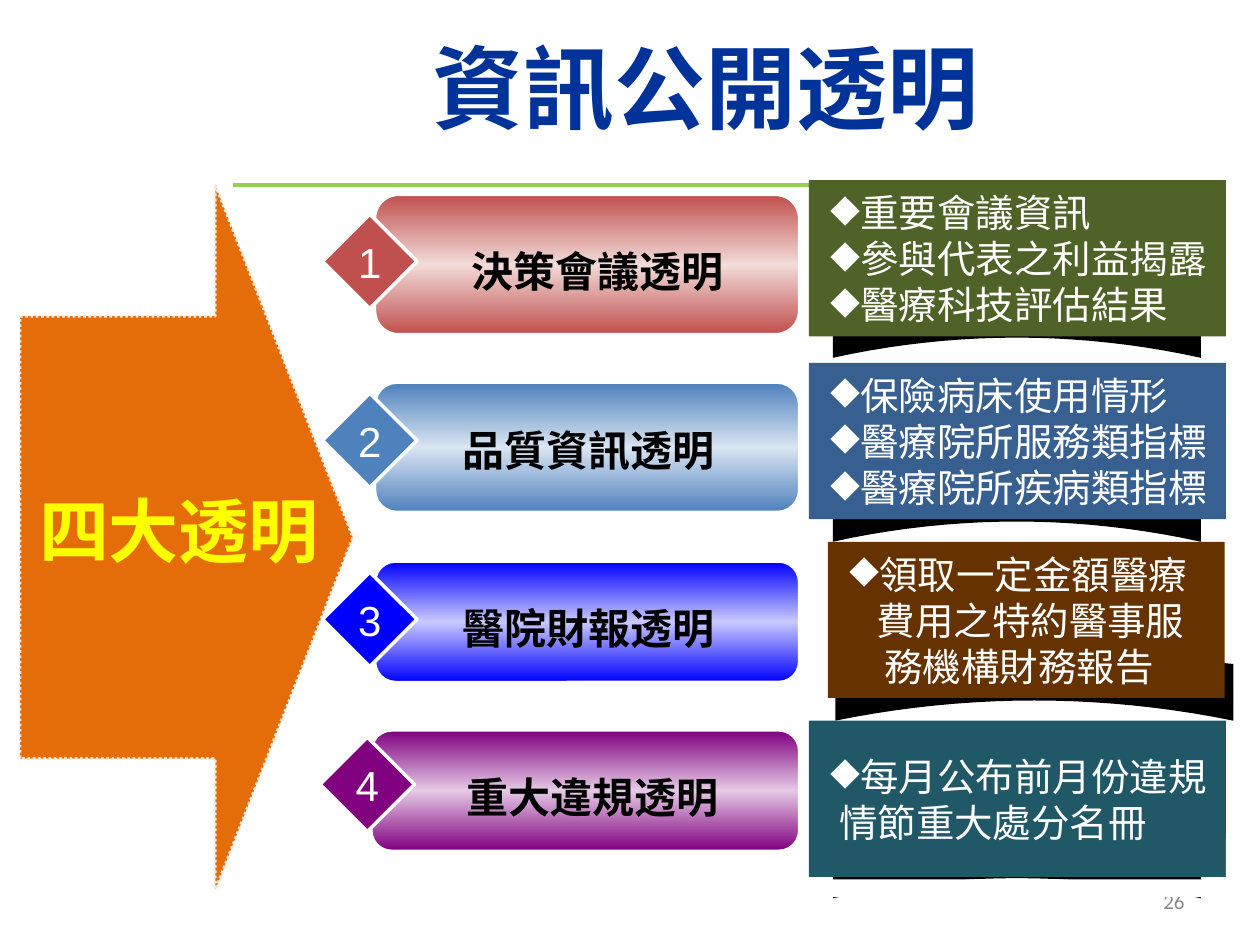
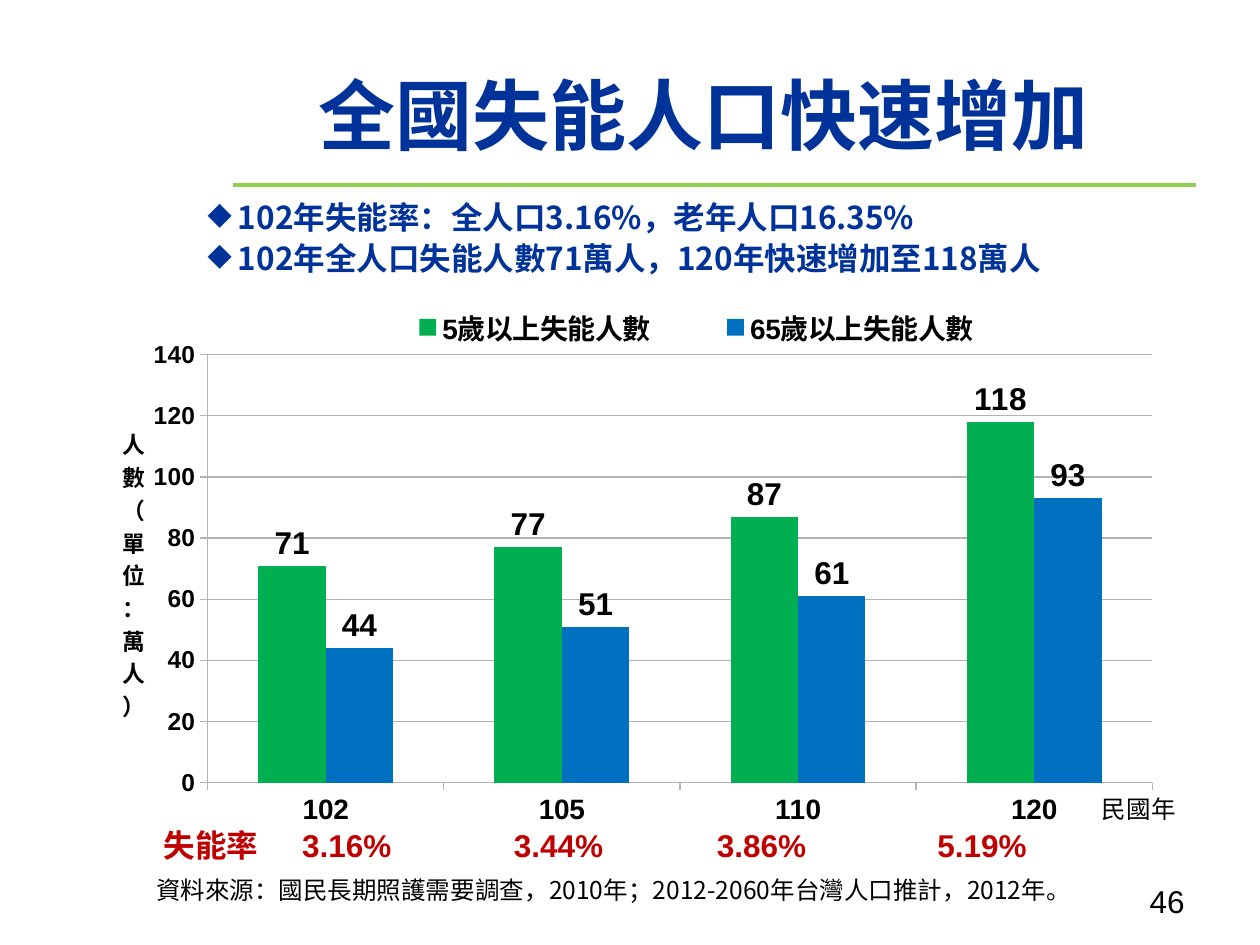
import copy

import pptx
import pptx.chart.data
import pptx.dml.color
import pptx.enum.chart
import pptx.enum.dml
import pptx.enum.shapes
import pptx.enum.text
import pptx.oxml
import pptx.oxml.ns
import pptx.util
from lxml import etree

Inches = pptx.util.Inches
Pt = pptx.util.Pt
RGBColor = pptx.dml.color.RGBColor
qn = pptx.oxml.ns.qn
SHAPE = pptx.enum.shapes.MSO_SHAPE
ALIGN = pptx.enum.text.PP_ALIGN
ANCHOR = pptx.enum.text.MSO_ANCHOR

WHITE = RGBColor(0xFF, 0xFF, 0xFF)
BLACK = RGBColor(0, 0, 0)
NAVY = RGBColor(0x00, 0x33, 0x99)
LIME = RGBColor(0x92, 0xD0, 0x50)
ORANGE = RGBColor(0xE4, 0x6D, 0x0A)
CREAM = RGBColor(0xEE, 0xEC, 0xE1)
YELLOW = RGBColor(0xFF, 0xFF, 0x00)
GRAY = RGBColor(0x89, 0x89, 0x89)
GRID = RGBColor(0xB3, 0xB3, 0xB3)
DARK_RED = RGBColor(0xC0, 0x00, 0x00)
GREEN = RGBColor(0x00, 0xB0, 0x50)
BLUE = RGBColor(0x00, 0x70, 0xC0)
RED = RGBColor(0xC0, 0x50, 0x4D)
PALE_RED = RGBColor(0xF2, 0xDB, 0xD9)
STEEL = RGBColor(0x4F, 0x81, 0xBD)
PALE_STEEL = RGBColor(0xD9, 0xE5, 0xF2)
PURE_BLUE = RGBColor(0x00, 0x00, 0xFF)
PALE_BLUE = RGBColor(0xC9, 0xC9, 0xFF)
PURPLE = RGBColor(0x80, 0x00, 0x80)
PALE_PURPLE = RGBColor(0xE5, 0xC9, 0xE5)
OLIVE = RGBColor(0x4F, 0x62, 0x28)
DENIM = RGBColor(0x37, 0x60, 0x91)
BROWN = RGBColor(0x66, 0x33, 0x00)
TEAL = RGBColor(0x21, 0x58, 0x67)

CJK = "Noto Sans CJK SC"

TOPICS = [
    ("決策會議透明", (2.98, 1.55, 3.36, 1.1), (2.56, 1.7), (3.23, 1.89, 3.03), RED, PALE_RED),
    ("品質資訊透明", (2.98, 3.04, 3.36, 1.02), (2.56, 3.12), (3.23, 3.31, 2.88), STEEL, PALE_STEEL),
    ("醫院財報透明", (2.98, 4.46, 3.36, 0.95), (2.56, 4.54), (3.23, 4.73, 2.88), PURE_BLUE, PALE_BLUE),
    ("重大違規透明", (2.95, 5.8, 3.39, 0.95), (2.54, 5.85), (3.15, 6.07, 3.11), PURPLE, PALE_PURPLE),
]
BULLETED = None
PANELS = [
    ((6.42, 1.43, 3.31, 1.24), (6.61, 2.24, 2.92), OLIVE,
     [("重要會議資訊", BULLETED), ("參與代表之利益揭露", BULLETED), ("醫療科技評估結果", BULLETED)]),
    ((6.42, 2.88, 3.31, 1.24), (6.61, 3.7, 2.92), DENIM,
     [("保險病床使用情形", BULLETED), ("醫療院所服務類指標", BULLETED), ("醫療院所疾病類指標", BULLETED)]),
    ((6.57, 4.3, 3.15, 1.24), (6.63, 5.12, 3.16), BROWN,
     [("領取一定金額醫療", BULLETED), ("費用之特約醫事服", 0.22), ("務機構財務報告", 0.28)]),
    ((6.42, 5.72, 3.31, 1.24), (6.61, 6.53, 2.92), TEAL,
     [("每月公布前月份違規", BULLETED), ("情節重大處分名冊", 0.07)]),
]


def write(para, text, size, color, bold=False, font="Arial"):
    """Add one styled run to a paragraph."""
    span = para.add_run()
    span.text = text
    span.font.name = font
    span.font.size = Pt(size)
    span.font.bold = bold
    span.font.color.rgb = color
    etree.SubElement(span.font._element, qn("a:ea"), typeface=CJK)


def indent(para, left, hang=0, bullet=None):
    """Set the left margin, hanging indent and bullet of a paragraph."""
    props = para._p.get_or_add_pPr()
    props.set("marL", str(Inches(left)))
    props.set("indent", str(Inches(-hang)))
    if bullet:
        etree.SubElement(props, qn("a:buChar"), char=bullet)


def set_frame(shape, anchor=ANCHOR.MIDDLE, insets=(0.1, 0.05)):
    """Set wrapping, anchor and insets, and return the text frame."""
    frame = shape.text_frame
    frame.word_wrap = True
    frame.vertical_anchor = anchor
    frame.margin_left = frame.margin_right = Inches(insets[0])
    frame.margin_top = frame.margin_bottom = Inches(insets[1])
    return frame


def add_text(page, box, text, size, color, align=ALIGN.LEFT, anchor=ANCHOR.MIDDLE, **style):
    """Add a text box with one paragraph, and return the paragraph."""
    frame = set_frame(page.shapes.add_textbox(*map(Inches, box)), anchor)
    para = frame.paragraphs[0]
    para.alignment = align
    write(para, text, size, color, **style)
    return para


def add_shape(page, kind, box, fill, line=None, width=1):
    """Add a flat preset shape."""
    shape = page.shapes.add_shape(kind, *map(Inches, box))
    finish(shape, fill, line, width)
    return shape


def finish(shape, fill, line=None, width=1):
    """Give a shape a plain fill and an optional outline."""
    shape.shadow.inherit = False
    shape.fill.solid()
    shape.fill.fore_color.rgb = fill
    if line is None:
        shape.line.fill.background()
    else:
        shape.line.color.rgb = line
        shape.line.width = Pt(width)


def add_page(deck, title, title_box, title_size, number, number_size, number_color, number_font):
    """Add a slide with its rule, title and page number."""
    page = deck.slides.add_slide(deck.slide_layouts[6])
    rule = page.shapes.add_connector(pptx.enum.shapes.MSO_CONNECTOR.STRAIGHT,
                                     Inches(1.85), Inches(1.47), Inches(9.49), Inches(1.47))
    rule.line.color.rgb = LIME
    rule.line.width = Pt(2.25)
    etree.SubElement(rule._element.spPr, qn("a:effectLst"))
    add_text(page, title_box, title, title_size, NAVY, ALIGN.CENTER, bold=True, font=CJK)
    add_text(page, (7.17, 6.95, 2.33, 0.4), number, number_size, number_color, ALIGN.RIGHT, font=number_font)
    return page


def add_topic(page, number, name, bar_box, badge_at, label_box, color, pale):
    """Draw a gradient bar with its numbered diamond and label."""
    bar = add_shape(page, SHAPE.ROUNDED_RECTANGLE, bar_box, color, WHITE)
    bar.fill.gradient()
    bar.fill.gradient_angle = 90
    for stop in bar.fill.gradient_stops:
        stop.color.rgb = color
    stops = bar._element.spPr.find(".//" + qn("a:gsLst"))
    stops.insert(1, copy.deepcopy(stops[0]))
    middle = bar.fill.gradient_stops[1]
    middle.position = 0.5
    middle.color.rgb = pale
    badge = add_shape(page, SHAPE.DIAMOND, (*badge_at, 0.75, 0.75), color, WHITE, 2)
    para = set_frame(badge, insets=(0, 0)).paragraphs[0]
    para.alignment = ALIGN.CENTER
    write(para, str(number), 24, WHITE)
    add_text(page, (*label_box, 0.51), name, 24, BLACK, ALIGN.CENTER, bold=True)


def add_curl(page, left, top, width):
    """Draw the black curved shadow below a panel."""
    steps = 20
    arch = [(left + width * (1 - i / steps), top + 0.44 + 0.16 * (1 - 2 * i / steps) ** 2)
            for i in range(steps + 1)]
    roof = [(left, top + 0.15), (left + width / 2, top), (left + width, top + 0.15)]
    points = [(Inches(x), Inches(y)) for x, y in arch + roof]
    builder = page.shapes.build_freeform(*points[0])
    builder.add_line_segments(points[1:], close=True)
    finish(builder.convert_to_shape(), BLACK)


def add_panel(page, box, curl, color, lines):
    """Draw a coloured panel of bulleted lines over its shadow."""
    add_curl(page, *curl)
    frame = set_frame(add_shape(page, SHAPE.RECTANGLE, box, color), insets=(0.17, 0.05))
    frame.margin_right = 0
    for i, (text, left) in enumerate(lines):
        para = frame.add_paragraph() if i else frame.paragraphs[0]
        para.alignment = ALIGN.LEFT
        if left is BULLETED:
            indent(para, 0.24, 0.24, "◆")
        else:
            indent(para, left)
        para.line_spacing = Pt(26.3)
        write(para, text, 22, WHITE)


def build_transparency(deck):
    """Build the slide of four kinds of transparency."""
    page = add_page(deck, "資訊公開透明", (1.69, 0.21, 7.82, 0.94), 52, "26", 12, GRAY, "Calibri")
    arrow = add_shape(page, SHAPE.RIGHT_ARROW, (0.16, 1.47, 2.64, 5.59), ORANGE, CREAM, 1.5)
    arrow.adjustments[0] = 0.628
    arrow.adjustments[1] = 0.413
    arrow.line.dash_style = pptx.enum.dml.MSO_LINE.ROUND_DOT
    para = add_text(page, (0.16, 3.65, 2.52, 0.94), "四大透明", 40, YELLOW, ALIGN.CENTER, bold=True, font=CJK)
    para.line_spacing = Pt(60)
    for panel in PANELS:
        add_panel(page, *panel)
    for number, topic in enumerate(TOPICS, 1):
        add_topic(page, number, *topic)
    for cover in ((6.5, 6.98, 3.5, 0.14), (9.73, 6.66, 0.27, 0.32)):
        add_shape(page, SHAPE.RECTANGLE, cover, WHITE)


def place(element, index, target=None, **lengths):
    """Give a chart part a manual layout in fractions of the chart."""
    for old in element.findall(qn("c:layout")):
        element.remove(old)
    layout = etree.Element(qn("c:layout"))
    manual = etree.SubElement(layout, qn("c:manualLayout"))
    if target:
        etree.SubElement(manual, qn("c:layoutTarget"), val=target)
    for mode in ("xMode", "yMode"):
        etree.SubElement(manual, qn("c:" + mode), val="edge")
    for name, value in lengths.items():
        etree.SubElement(manual, qn("c:" + name), val=str(value))
    element.insert(index, layout)


def style_axis(axis, size, title, title_size, bold, x, y):
    """Style an axis and place its title."""
    axis.tick_labels.font.size = Pt(size)
    axis.tick_labels.font.bold = True
    axis.major_tick_mark = pptx.enum.chart.XL_TICK_MARK.OUTSIDE
    axis.format.line.color.rgb = GRID
    write(axis.axis_title.text_frame.paragraphs[0], title, title_size, BLACK, bold)
    place(axis.axis_title._element, 1, x=x, y=y)


def add_disability_chart(page, box):
    """Add the column chart of people with disabilities."""
    kinds = pptx.enum.chart
    data = pptx.chart.data.CategoryChartData(number_format="0")
    data.categories = ["102", "105", "110", "120"]
    data.add_series("5歲以上失能人數", [71, 77, 87, 118])
    data.add_series("65歲以上失能人數", [44, 51, 61, 93])
    chart = page.shapes.add_chart(kinds.XL_CHART_TYPE.COLUMN_CLUSTERED, *map(Inches, box), data).chart
    chart.font.name = "Arial"
    chart.font.size = Pt(10)
    chart.font.color.rgb = BLACK
    chart.has_title = False
    chart.has_legend = True
    chart.legend.position = kinds.XL_LEGEND_POSITION.TOP
    chart.legend.include_in_layout = False
    chart.legend.font.size = Pt(16)
    chart.legend.font.bold = True
    place(chart.legend._element, 1, x=0.25, y=0.04, w=0.62, h=0.08)
    plot = chart.plots[0]
    plot.gap_width = 150
    plot.overlap = 0
    plot.vary_by_categories = False
    for series, color in zip(plot.series, (GREEN, BLUE)):
        series.format.fill.solid()
        series.format.fill.fore_color.rgb = color
        labels = series.data_labels
        labels.show_value = True
        labels.position = kinds.XL_LABEL_POSITION.OUTSIDE_END
        labels.font.size = Pt(18)
        labels.font.bold = True
    style_axis(chart.category_axis, 16, "民國年", 14, False, 0.92, 0.91)
    value_axis = chart.value_axis
    value_axis.minimum_scale, value_axis.maximum_scale, value_axis.major_unit = 0, 140, 20
    value_axis.major_gridlines.format.line.color.rgb = GRID
    style_axis(value_axis, 14, "人數（單位：萬人）", 13, True, 0.04, 0.25)
    body = value_axis.axis_title._element.find(".//" + qn("a:bodyPr"))
    body.set("rot", "0")
    body.set("vert", "wordArtVert")
    place(chart._chartSpace.find(".//" + qn("c:plotArea")), 0, "inner", x=0.12, y=0.13, w=0.85, h=0.78)


def build_disability(deck):
    """Build the slide on the growth of the disabled population."""
    page = add_page(deck, "全國失能人口快速增加", (1.38, 0.28, 8.41, 1.25), 44, "46", 18, BLACK, "Arial")
    frame = set_frame(page.shapes.add_textbox(*map(Inches, (0.9, 1.5, 8.27, 0.79))), ANCHOR.TOP)
    facts = ["102年失能率：全人口3.16%，老年人口16.35%",
             "102年全人口失能人數71萬人，120年快速增加至118萬人"]
    for i, fact in enumerate(facts):
        para = frame.add_paragraph() if i else frame.paragraphs[0]
        indent(para, 0.89, 0.24, "◆")
        para.line_spacing = Pt(23.4)
        write(para, fact, 18, NAVY, True, CJK)
    add_disability_chart(page, (0.59, 2.25, 8.82, 4.36))
    rates = add_text(page, (1.2, 6.51, 8.05, 0.4), "失能率\t3.16%\t3.44%\t3.86%\t5.19%", 18, DARK_RED, bold=True)
    tabs = etree.SubElement(rates._p.get_or_add_pPr(), qn("a:tabLst"))
    for stop in (1.1, 2.78, 4.39, 6.14):
        etree.SubElement(tabs, qn("a:tab"), pos=str(Inches(stop)), algn="l")
    source = add_text(page, (1.14, 6.9, 7.34, 0.32),
                      "資料來源：國民長期照護需要調查，2010年；2012-2060年台灣人口推計，2012年。",
                      14, BLACK, anchor=ANCHOR.TOP, font=CJK)
    indent(source, 0.39, 0.39)
    source.line_spacing = Pt(16.6)


def main():
    """Build and save the deck."""
    deck = pptx.Presentation()
    deck.slide_width, deck.slide_height = Inches(10), Inches(7.5)
    build_transparency(deck)
    build_disability(deck)
    deck.save("out.pptx")


if __name__ == "__main__":
    main()
